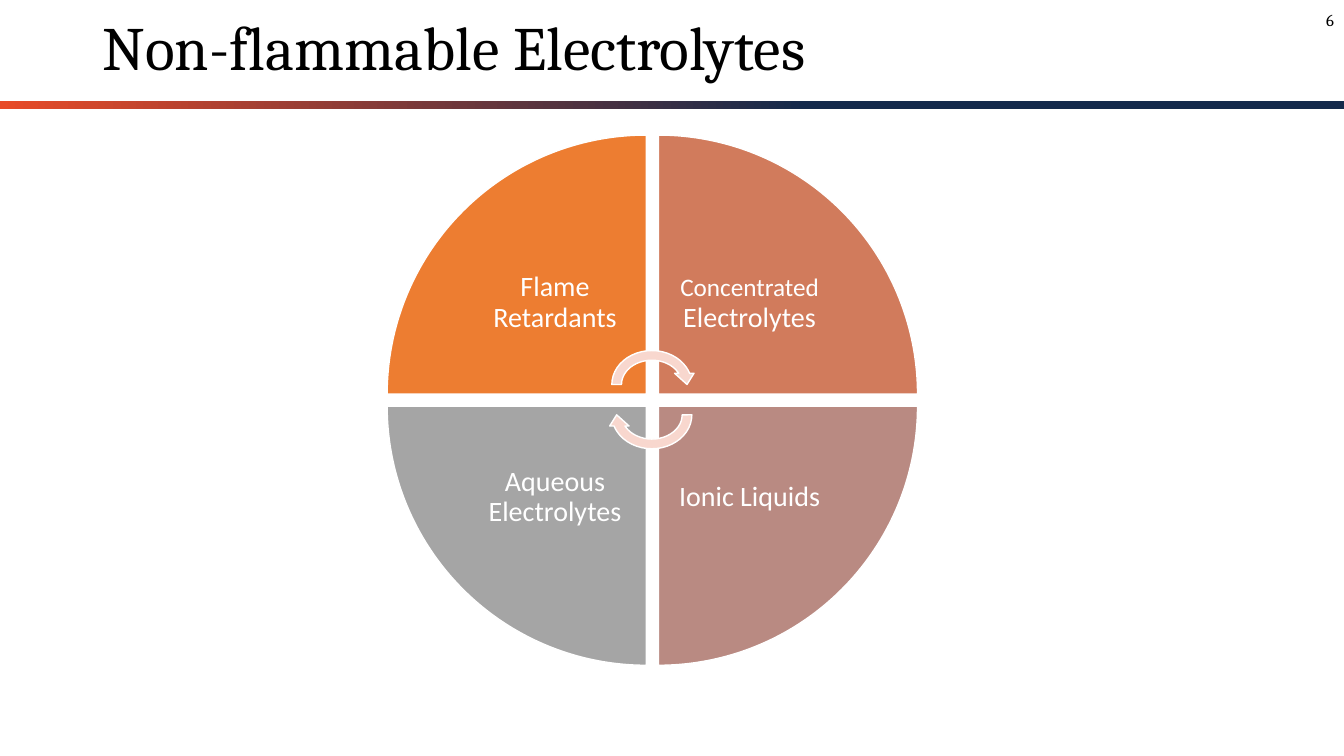
from dataclasses import dataclass

import pptx
import pptx.dml.color
import pptx.enum.shapes
import pptx.enum.text
import pptx.util

Inches = pptx.util.Inches
Pt = pptx.util.Pt
SHAPE = pptx.enum.shapes.MSO_SHAPE
ALIGN = pptx.enum.text.PP_ALIGN

WHITE, BLACK, NAVY, ORANGE, PINK = "FFFFFF", "000000", "13294B", "E84A27", "F8D7CE"
WHEEL_X, WHEEL_Y = 3.84, 1.34
WEDGE, STEP = 2.57, 2.69
LABEL = 1.81


@dataclass
class Run:
    text: str
    size: float


@dataclass
class Quadrant:
    col: int
    row: int
    rotation: int
    color: str
    runs: list[Run]
    inset: float = 0.16


QUADRANTS = [
    Quadrant(0, 0, 0, "ED7D31", [Run("Flame Retardants", 20)]),
    Quadrant(1, 0, 90, "D17B5C", [Run("Concentrated", 18), Run(" Electrolytes", 20)], 0.14),
    Quadrant(1, 1, 180, "B98A82", [Run("Ionic Liquids", 20)]),
    Quadrant(0, 1, 270, "A5A5A5", [Run("Aqueous Electrolytes", 20)]),
]


def rgb(color: str) -> pptx.dml.color.RGBColor:
    return pptx.dml.color.RGBColor.from_string(color)


def add_preset(slide, kind, x: float, y: float, w: float, h: float,
               color: str, rotation: int = 0) -> None:
    sp = slide.shapes.add_shape(kind, Inches(x), Inches(y), Inches(w), Inches(h))
    sp.shadow.inherit = False
    sp.rotation = rotation
    sp.fill.solid()
    sp.fill.fore_color.rgb = rgb(color)
    sp.line.color.rgb = rgb(WHITE)
    sp.line.width = Pt(1)


def add_text(slide, x: float, y: float, w: float, h: float, runs: list[Run],
             font: str, color: str, align=ALIGN.LEFT, spacing: float = 1.0,
             inset_x: float = 0.1, inset_y: float = 0.05) -> None:
    sp = slide.shapes.add_textbox(Inches(x), Inches(y), Inches(w), Inches(h))
    tf = sp.text_frame
    tf.word_wrap = True
    tf.vertical_anchor = pptx.enum.text.MSO_ANCHOR.MIDDLE
    tf.margin_left = tf.margin_right = Inches(inset_x)
    tf.margin_top = tf.margin_bottom = Inches(inset_y)
    p = tf.paragraphs[0]
    p.alignment = align
    p.line_spacing = spacing
    for run in runs:
        r = p.add_run()
        r.text = run.text
        r.font.size = Pt(run.size)
        r.font.name = font
        r.font.color.rgb = rgb(color)


def add_header_bar(slide) -> None:
    sp = slide.shapes.add_shape(SHAPE.RECTANGLE, 0, Inches(1), Inches(13.33), Inches(0.08))
    sp.shadow.inherit = False
    sp.line.fill.background()
    sp.fill.gradient()
    sp.fill.gradient_angle = 180
    for stop, (position, color) in zip(sp.fill.gradient_stops, [(0.4, NAVY), (1.0, ORANGE)]):
        stop.position = position
        stop.color.rgb = rgb(color)


def add_quadrant(slide, q: Quadrant) -> None:
    x, y = WHEEL_X + q.col * STEP, WHEEL_Y + q.row * STEP
    add_preset(slide, SHAPE.PIE_WEDGE, x, y, WEDGE, WEDGE, q.color, q.rotation)
    # Labels sit against the centre of the wheel
    label_x = x + (WEDGE - LABEL) * (1 - q.col)
    label_y = y + (WEDGE - LABEL) * (1 - q.row)
    add_text(slide, label_x, label_y, LABEL, LABEL, q.runs, "Calibri", WHITE,
             ALIGN.CENTER, 0.9, q.inset, q.inset)


def main() -> None:
    prs = pptx.Presentation()
    prs.slide_width, prs.slide_height = Inches(13.33), Inches(7.5)
    slide = prs.slides.add_slide(prs.slide_layouts[6])

    # Header
    add_header_bar(slide)
    add_text(slide, 0.92, 0, 12.41, 1, [Run("Non-flammable Electrolytes", 44)],
             "Cambria", BLACK, spacing=0.9)
    add_text(slide, 10.33, 0, 3, 0.4, [Run("6", 12)], "Cambria", BLACK, ALIGN.RIGHT)

    # Wheel
    for quadrant in QUADRANTS:
        add_quadrant(slide, quadrant)

    # Arrows around the centre
    for y, rotation in [(3.43, 0), (3.73, 180)]:
        add_preset(slide, SHAPE.CIRCULAR_ARROW, 6.02, y, 0.89, 0.77, PINK, rotation)

    prs.save("out.pptx")


if __name__ == "__main__":
    main()
